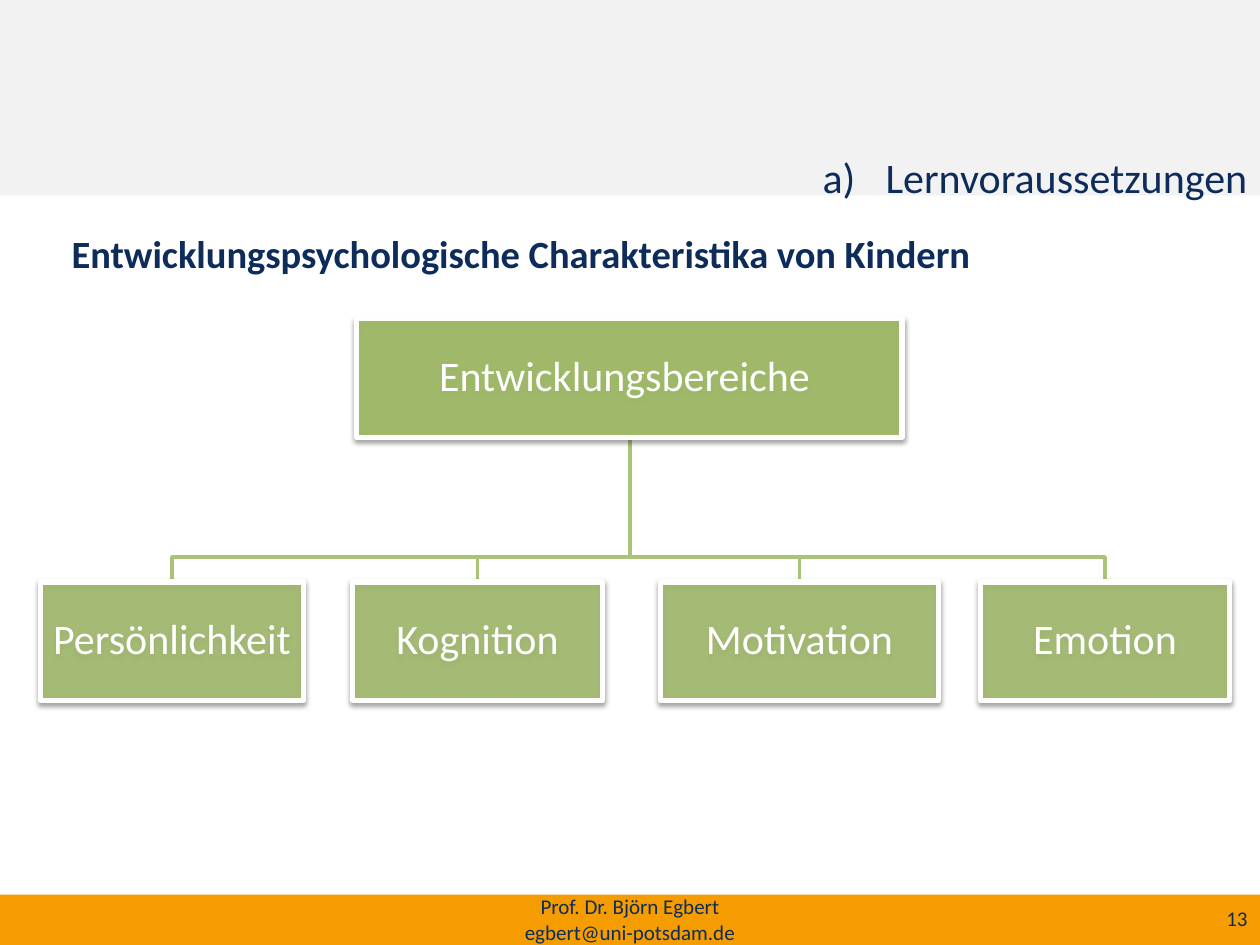
from lxml.etree import SubElement
from pptx import Presentation
from pptx.dml.color import RGBColor
from pptx.enum.shapes import MSO_SHAPE
from pptx.enum.text import MSO_ANCHOR, PP_ALIGN
from pptx.oxml.ns import qn
from pptx.util import Inches, Pt

NAVY, WHITE, GREEN, BRANCH = "0D2C5A", "FFFFFF", "9BBB59", "A9C379"
BAND_GREY, BAND_ORANGE = "F2F2F2", "F59C00"


def color(value):
    return RGBColor.from_string(value)


class SlideBuilder:
    font = "Calibri"

    def __init__(self, slide):
        self.slide = slide

    def add_runs(self, paragraph, text, size, hue=NAVY, bold=False):
        """Add the lines of a text as runs of one paragraph."""
        for index, line in enumerate(text.split("\n")):
            if index:
                paragraph.add_line_break()
            run = paragraph.add_run()
            run.text = line
            run.font.name = self.font
            run.font.size = Pt(size)
            run.font.bold = bold
            run.font.color.rgb = color(hue)

    def rectangle(self, left, top, width, height, fill):
        rect = self.slide.shapes.add_shape(
            MSO_SHAPE.RECTANGLE, Inches(left), Inches(top), Inches(width), Inches(height))
        rect.shadow.inherit = False
        rect.fill.solid()
        rect.fill.fore_color.rgb = color(fill)
        rect.line.fill.background()
        return rect

    def text(self, content, left, top, width, height, size,
             align=PP_ALIGN.LEFT, anchor=MSO_ANCHOR.TOP, bold=False):
        frame = self.slide.shapes.add_textbox(
            Inches(left), Inches(top), Inches(width), Inches(height)).text_frame
        frame.word_wrap = True
        frame.vertical_anchor = anchor
        frame.paragraphs[0].alignment = align
        self.add_runs(frame.paragraphs[0], content, size, bold=bold)

    def title(self, content, left, top, width, height):
        """Fill the title placeholder with a lettered heading."""
        title = self.slide.shapes.title
        title.left, title.top = Inches(left), Inches(top)
        title.width, title.height = Inches(width), Inches(height)
        title.text_frame.vertical_anchor = MSO_ANCHOR.TOP
        paragraph = title.text_frame.paragraphs[0]
        paragraph.alignment = PP_ALIGN.RIGHT
        properties = paragraph._p.get_or_add_pPr()
        properties.set("marL", str(Inches(0.5)))
        properties.set("indent", str(-Inches(0.5)))
        SubElement(properties, qn("a:buFont"), typeface=self.font)
        SubElement(properties, qn("a:buAutoNum"), type="alphaLcParenR")
        self.add_runs(paragraph, content, 24)

    def node(self, content, left, top, width, height, opacity):
        """Draw a translucent, shadowed box of the hierarchy."""
        box = self.rectangle(left, top, width, height, GREEN)
        box.line.color.rgb = color(WHITE)
        box.line.width = Pt(3)
        properties = box._element.spPr
        fill = properties.find(qn("a:solidFill")).find(qn("a:srgbClr"))
        SubElement(fill, qn("a:alpha"), val=str(opacity * 1000))
        shadow = SubElement(
            properties.find(qn("a:effectLst")), qn("a:outerShdw"),
            blurRad=str(Pt(3.1)), dist=str(Pt(1.6)), dir="5400000", rotWithShape="0")
        shade = SubElement(shadow, qn("a:srgbClr"), val="000000")
        SubElement(shade, qn("a:alpha"), val="38000")
        frame = box.text_frame
        frame.word_wrap = True
        frame.vertical_anchor = MSO_ANCHOR.MIDDLE
        frame.margin_left = frame.margin_right = Inches(0.02)
        frame.margin_top = frame.margin_bottom = Inches(0.02)
        paragraph = frame.paragraphs[0]
        paragraph.alignment = PP_ALIGN.CENTER
        paragraph.line_spacing = 0.9
        self.add_runs(paragraph, content, 24, WHITE)

    def branch(self, start_x, start_y, bend_y, end_x, end_y):
        points = [(start_x, bend_y), (end_x, bend_y), (end_x, end_y)]
        builder = self.slide.shapes.build_freeform(Inches(start_x), Inches(start_y))
        builder.add_line_segments([(Inches(x), Inches(y)) for x, y in points], close=False)
        outline = builder.convert_to_shape()
        outline.shadow.inherit = False
        outline.fill.background()
        outline.line.color.rgb = color(BRANCH)
        outline.line.width = Pt(2)


def main():
    presentation = Presentation()
    presentation.slide_width, presentation.slide_height = Inches(10), Inches(7.5)
    page = SlideBuilder(presentation.slides.add_slide(presentation.slide_layouts[5]))

    # Header and footer bands
    page.rectangle(0, 0, 10, 1.55, BAND_GREY)
    page.rectangle(0, 7.1, 10, 0.4, BAND_ORANGE)
    page.text("13", 7.6, 7.09, 2.4, 0.4, 12, PP_ALIGN.RIGHT, MSO_ANCHOR.MIDDLE)
    page.text("Prof. Dr. Björn Egbert\negbert@uni-potsdam.de",
              3.31, 7.09, 3.38, 0.41, 12, PP_ALIGN.CENTER, MSO_ANCHOR.MIDDLE)

    # Hierarchy: branches first, boxes above them
    root_top, area_top, box_height = 2.53, 4.62, 0.94
    areas = [("Persönlichkeit", 0.32, 2.09), ("Kognition", 2.8, 1.98),
             ("Motivation", 5.24, 2.21), ("Emotion", 7.78, 1.98)]
    for _, left, width in areas:
        page.branch(5, root_top + box_height, 4.42, left + width / 2, area_top)
    page.node("Entwicklungsbereiche ", 2.83, root_top, 4.33, box_height, 80)
    for area, left, width in areas:
        page.node(area, left, area_top, width, box_height, 70)

    # Headings, with the title raised above the header band
    page.title("Lernvoraussetzungen", 1.38, 1.15, 8.62, 0.63)
    title = page.slide.shapes.title._element
    title.getparent().append(title)
    page.text("Entwicklungspsychologische Charakteristika von Kindern",
              0.47, 1.78, 9.13, 0.63, 22, bold=True)

    presentation.save("out.pptx")


if __name__ == "__main__":
    main()
